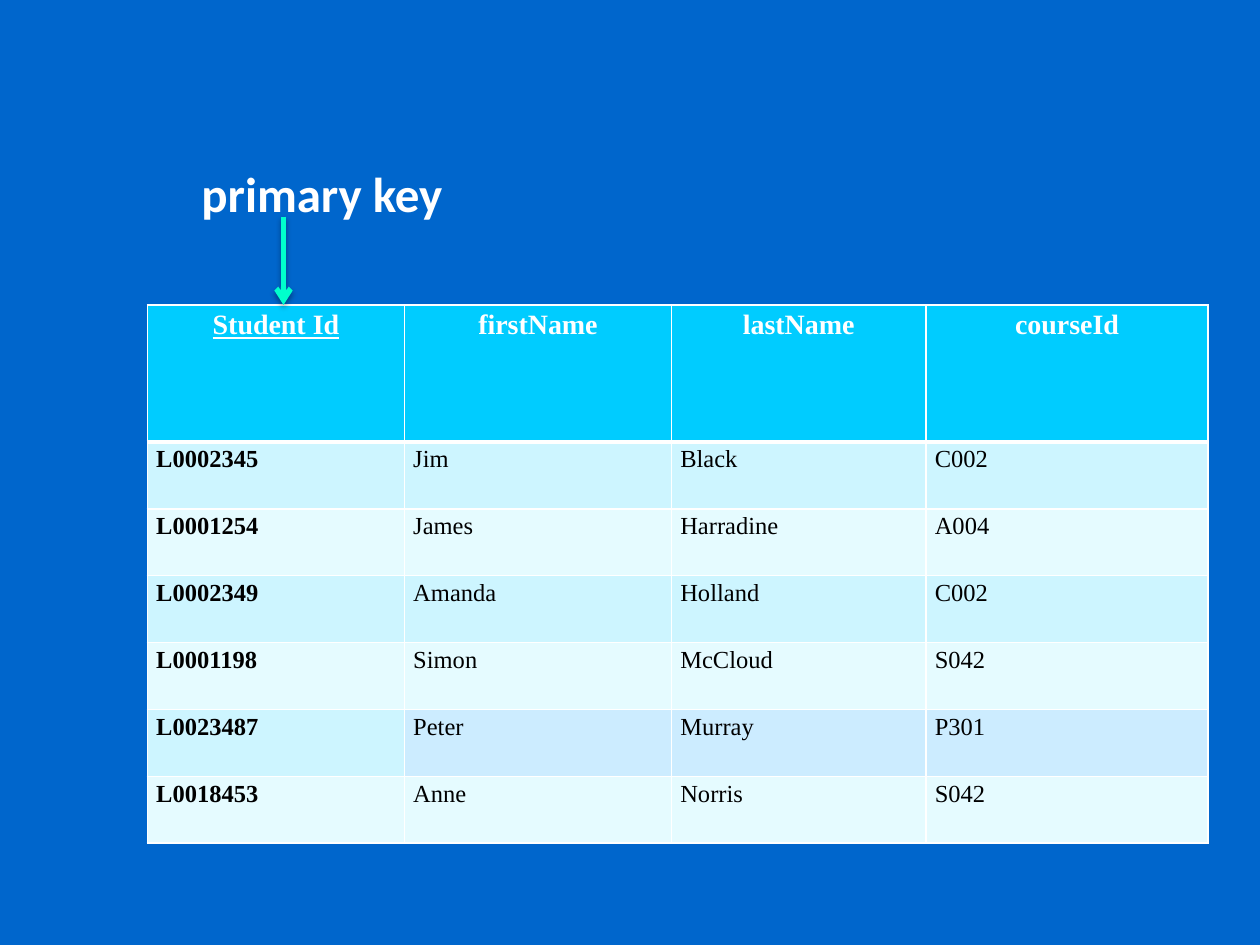
from lxml import etree
from pptx import Presentation, util as u
from pptx.dml import color
from pptx.enum import shapes, text
from pptx.oxml import ns

WIDTH, HEIGHT = u.Inches(10), u.Inches(7.5)
HEADER_ROW, BODY_ROW = 0.145, 0.0708
COLUMNS = [0.204, 0.212, 0.202, 0.224]
TABLE_LEFT, TABLE_TOP = 0.117, 0.3227
ARROW_X, ARROW_TOP = 0.225, 0.2293
HEADER_FILL, BANDS, PALE_BLUE = "00CCFF", ["E5FBFF", "CDF5FF"], "CCECFF"
RECORDS = [
    ["Student Id", "firstName", "lastName", "courseId"],
    ["L0002345", "Jim", "Black", "C002"],
    ["L0001254", "James", "Harradine", "A004"],
    ["L0002349", "Amanda", "Holland", "C002"],
    ["L0001198", "Simon", "McCloud", "S042"],
    ["L0023487", "Peter", "Murray", "P301"],
    ["L0018453", "Anne", "Norris", "S042"],
]


def paint(target, hex_color):
    target.rgb = color.RGBColor.from_string(hex_color)


def add_element(parent, tag, **values):
    return etree.SubElement(parent, ns.qn(tag), values)


deck = Presentation()
deck.slide_width, deck.slide_height = WIDTH, HEIGHT
page = deck.slides.add_slide(deck.slide_layouts[6])
page.background.fill.solid()
paint(page.background.fill.fore_color, "0066CC")

row_shares = [HEADER_ROW] + [BODY_ROW] * (len(RECORDS) - 1)
table = page.shapes.add_table(
    len(RECORDS), len(COLUMNS), int(WIDTH * TABLE_LEFT), int(HEIGHT * TABLE_TOP),
    int(WIDTH * sum(COLUMNS)), int(HEIGHT * sum(row_shares))).table
for column, share in zip(table.columns, COLUMNS):
    column.width = int(WIDTH * share)

for row_index, (record, share) in enumerate(zip(RECORDS, row_shares)):
    table.rows[row_index].height = int(HEIGHT * share)
    is_header = row_index == 0
    for column_index, value in enumerate(record):
        cell = table.cell(row_index, column_index)
        margins = {"margin_left": 0.07, "margin_right": 0.07, "margin_top": 0, "margin_bottom": 0}
        for name, inches in margins.items():
            setattr(cell, name, u.Inches(inches))

        heavy_side = {0: "B", 1: "T"}.get(row_index)
        for side in "LRTB":
            points = 3 if side == heavy_side else 1
            border = add_element(cell._tc.tcPr, f"a:ln{side}", w=str(u.Pt(points)))
            add_element(add_element(border, "a:solidFill"), "a:srgbClr", val="FFFFFF")

        fill = HEADER_FILL if is_header else BANDS[row_index % 2]
        if row_index == 5 and column_index > 0:
            fill = PALE_BLUE
        cell.fill.solid()
        paint(cell.fill.fore_color, fill)

        para = cell.text_frame.paragraphs[0]
        para.line_spacing = 1.15
        para.alignment = text.PP_ALIGN.CENTER if is_header else text.PP_ALIGN.LEFT
        span = para.add_run()
        span.text = value
        formats = {
            "name": "Times New Roman",
            "size": u.Pt(16 if is_header else 14),
            "bold": is_header or column_index == 0,
            "underline": is_header and column_index == 0,
        }
        for name, setting in formats.items():
            setattr(span.font, name, setting)
        paint(span.font.color, "FFFFFF" if is_header else "000000")

box = page.shapes.add_textbox(
    int(WIDTH * 0.15), int(HEIGHT / 6), int(WIDTH * 0.275), int(HEIGHT * 0.0613))
box.text_frame.word_wrap = True
span = box.text_frame.paragraphs[0].add_run()
span.text = "primary key"
for name, setting in {"name": "Calibri", "size": u.Pt(28), "bold": True}.items():
    setattr(span.font, name, setting)
paint(span.font.color, "FFFFFF")

arrow = page.shapes.add_connector(
    shapes.MSO_CONNECTOR.STRAIGHT, int(WIDTH * ARROW_X), int(HEIGHT * ARROW_TOP),
    int(WIDTH * ARROW_X), int(HEIGHT * TABLE_TOP))
arrow.line.width = u.Pt(3)
paint(arrow.line.color, "00FFCC")
add_element(arrow.line._get_or_add_ln(), "a:tailEnd", type="arrow")
effects = add_element(arrow._element.spPr, "a:effectLst")
shadow = add_element(
    effects, "a:outerShdw", blurRad=str(u.Pt(3.1)), dist=str(u.Pt(1.8)),
    dir="5400000", rotWithShape="0")
add_element(add_element(shadow, "a:srgbClr", val="000000"), "a:alpha", val="35000")

deck.save("out.pptx")
